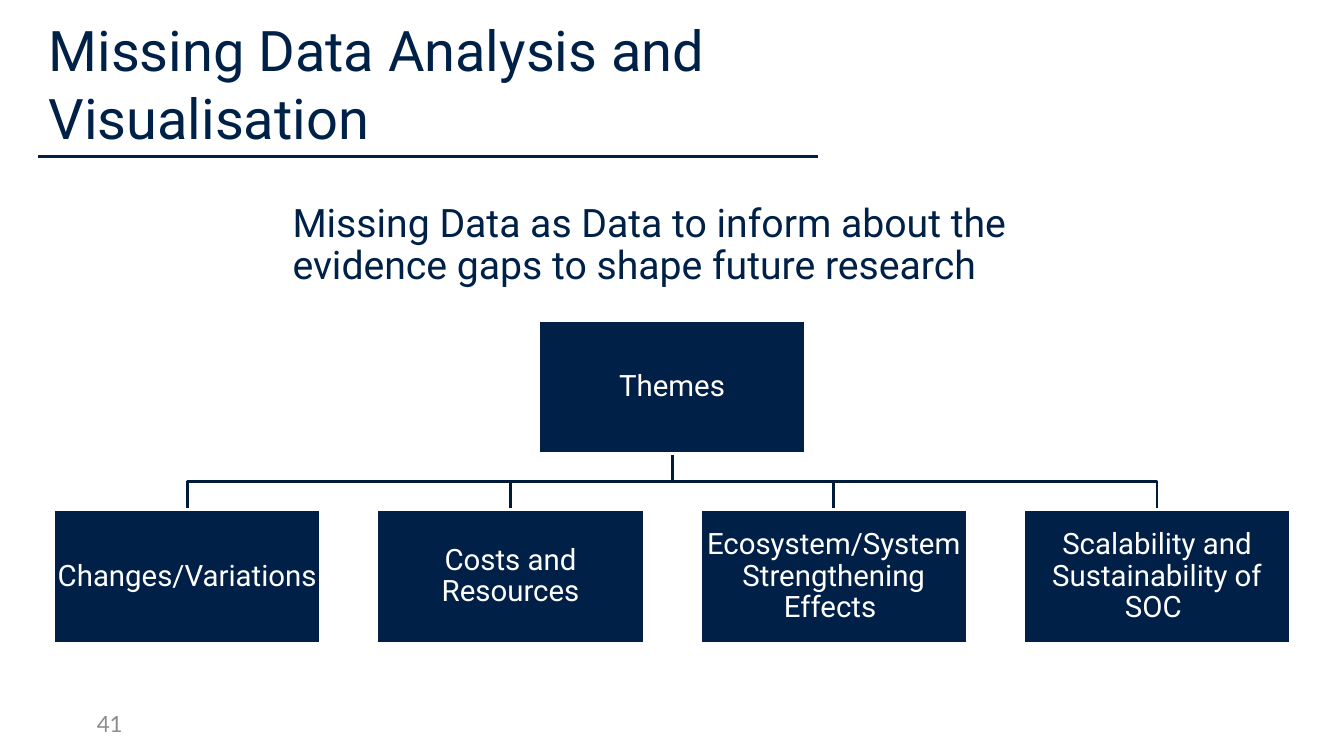
from dataclasses import dataclass

from lxml.etree import SubElement
from pptx import Presentation
from pptx.dml.color import RGBColor
from pptx.enum.shapes import MSO_CONNECTOR as Connector, MSO_SHAPE as Preset
from pptx.enum.text import MSO_ANCHOR as Anchor, PP_ALIGN as Align
from pptx.oxml.ns import qn
from pptx.util import Pt


@dataclass(frozen=True)
class Theme:
    navy: RGBColor = RGBColor(0x00, 0x21, 0x47)
    card: RGBColor = RGBColor(0x00, 0x20, 0x47)
    branch: RGBColor = RGBColor(0x00, 0x1A, 0x39)
    white: RGBColor = RGBColor(0xFF, 0xFF, 0xFF)
    grey: RGBColor = RGBColor(0x8C, 0x8C, 0x8C)
    main_font: str = "Roboto"
    number_font: str = "Lato"
    title_size: int = 40
    lead_size: int = 28
    card_size: int = 21
    number_size: int = 16


THEME = Theme()
CENTRE = 480.1
CARD_WIDTH, CARD_HEIGHT = 190.8, 95.4
CARD_PITCH = 230.9
ROOT_TOP, THEMES_TOP = 228.7, 364.1
ROOT_BOTTOM = ROOT_TOP + CARD_HEIGHT
BUS_Y = (ROOT_BOTTOM + THEMES_TOP) / 2
THEMES = [
    "Changes/Variations",
    "Costs and Resources",
    "Ecosystem/System Strengthening Effects ",
    "Scalability and Sustainability of SOC ",
]


def write(frame, text, size, color, font=THEME.main_font, align=Align.LEFT,
          anchor=Anchor.MIDDLE, spacing=None):
    frame.word_wrap = True
    frame.vertical_anchor = anchor
    frame.text = text
    paragraph = frame.paragraphs[0]
    paragraph.alignment = align
    paragraph.line_spacing = spacing
    run = paragraph.runs[0]
    run.font.name = font
    run.font.size = Pt(size)
    run.font.color.rgb = color


def add_text(slide, left, top, width, height, text, size, color, **style):
    box = slide.shapes.add_textbox(Pt(left), Pt(top), Pt(width), Pt(height))
    write(box.text_frame, text, size, color, **style)


def add_card(slide, centre, top, text):
    card = slide.shapes.add_shape(
        Preset.RECTANGLE, Pt(centre - CARD_WIDTH / 2), Pt(top),
        Pt(CARD_WIDTH), Pt(CARD_HEIGHT))
    card.shadow.inherit = False
    card.fill.solid()
    card.fill.fore_color.rgb = THEME.card
    card.line.color.rgb = THEME.white
    card.line.width = Pt(2)
    frame = card.text_frame
    frame.margin_left = frame.margin_right = Pt(1)
    frame.margin_top = frame.margin_bottom = Pt(1)
    write(frame, text, THEME.card_size, THEME.white,
          align=Align.CENTER, spacing=0.9)


def add_rule(slide, left, right, y):
    rule = slide.shapes.add_connector(
        Connector.STRAIGHT, Pt(left), Pt(y), Pt(right), Pt(y))
    rule.line.color.rgb = THEME.navy
    rule.line.width = Pt(2)
    SubElement(rule._element.spPr, qn("a:effectLst"))


def add_branch(slide, centre):
    outline = slide.shapes.build_freeform(Pt(CENTRE), Pt(ROOT_BOTTOM))
    bends = [(CENTRE, BUS_Y), (centre, BUS_Y), (centre, THEMES_TOP)]
    outline.add_line_segments([(Pt(x), Pt(y)) for x, y in bends], close=False)
    branch = outline.convert_to_shape()
    branch.shadow.inherit = False
    branch.fill.background()
    branch.line.color.rgb = THEME.branch
    branch.line.width = Pt(2)


def add_theme_tree(slide):
    centres = [CENTRE + (i - (len(THEMES) - 1) / 2) * CARD_PITCH
               for i in range(len(THEMES))]
    for centre in reversed(centres):
        add_branch(slide, centre)
    add_card(slide, CENTRE, ROOT_TOP, "Themes")
    for centre, theme in zip(centres, THEMES):
        add_card(slide, centre, THEMES_TOP, theme)


def main():
    deck = Presentation()
    deck.slide_width, deck.slide_height = Pt(960), Pt(540)
    slide = deck.slides.add_slide(deck.slide_layouts[6])

    add_text(slide, 47.9, 502.2, 46.8, 28.8, "41", THEME.number_size,
             THEME.grey, font=THEME.number_font, align=Align.RIGHT)
    add_rule(slide, 27.4, 584, 111.6)
    add_text(slide, 27.6, 7.2, 574.6, 104.4,
             "Missing Data Analysis and Visualisation",
             THEME.title_size, THEME.navy)
    add_text(slide, 201.9, 141.8, 556.6, 84.2,
             "Missing Data as Data to inform about the evidence gaps "
             "to shape future research",
             THEME.lead_size, THEME.navy, anchor=Anchor.TOP, spacing=0.9)
    add_theme_tree(slide)

    deck.save("out.pptx")


if __name__ == "__main__":
    main()
